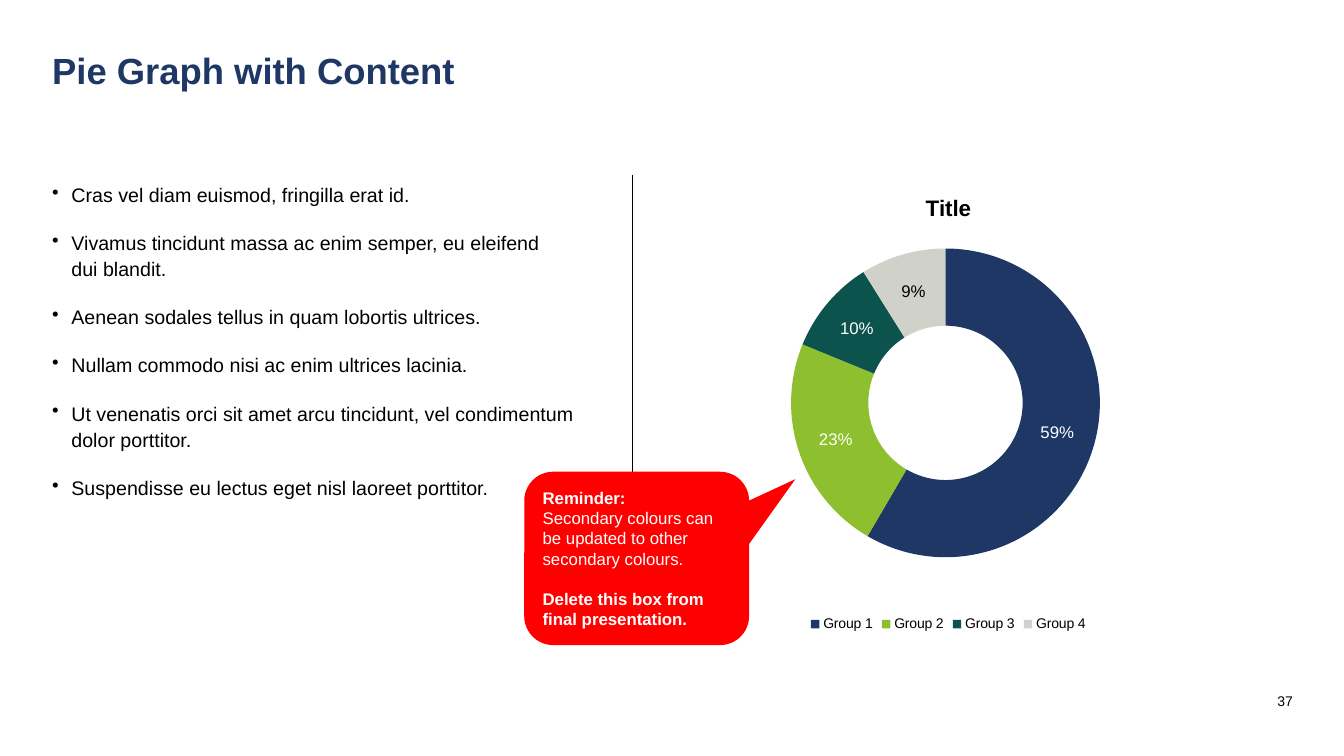
from lxml import etree
from pptx import Presentation
from pptx.chart.data import CategoryChartData
from pptx.dml.color import RGBColor
from pptx.enum.chart import XL_CHART_TYPE, XL_LEGEND_POSITION
from pptx.enum.shapes import MSO_CONNECTOR, MSO_SHAPE
from pptx.enum.text import MSO_ANCHOR, PP_ALIGN
from pptx.oxml import parse_xml
from pptx.oxml.ns import nsdecls, qn
from pptx.util import Inches, Pt

DOUGHNUT = XL_CHART_TYPE.DOUGHNUT
BOTTOM = XL_LEGEND_POSITION.BOTTOM
STRAIGHT = MSO_CONNECTOR.STRAIGHT
CALLOUT = MSO_SHAPE.ROUNDED_RECTANGULAR_CALLOUT
TOP, MIDDLE = MSO_ANCHOR.TOP, MSO_ANCHOR.MIDDLE
LEFT, RIGHT = PP_ALIGN.LEFT, PP_ALIGN.RIGHT

FONT = "Arial"
COLOURS = {
    "navy": "1E3765",
    "lime": "8DBF2E",
    "teal": "0D534D",
    "stone": "D0D1C9",
    "red": "FF0000",
    "black": "000000",
    "white": "FFFFFF",
}
POINTS = [
    "Cras vel diam euismod, fringilla erat id.",
    "Vivamus tincidunt massa ac enim semper, eu eleifend\vdui blandit.",
    "Aenean sodales tellus in quam lobortis ultrices.",
    "Nullam commodo nisi ac enim ultrices lacinia.",
    "Ut venenatis orci sit amet arcu tincidunt, vel condimentum dolor porttitor.",
    "Suspendisse eu lectus eget nisl laoreet porttitor.",
]
GROUPS = [
    ("Group 1", 59, "navy"),
    ("Group 2", 23, "lime"),
    ("Group 3", 10, "teal"),
    ("Group 4", 9, "stone"),
]
PERCENT = '0"%"'


def colour(name):
    return RGBColor.from_string(COLOURS[name])


def style_font(font, size, ink="black", bold=False):
    font.name, font.size, font.bold = FONT, Pt(size), bold
    font.color.rgb = colour(ink)


def write(frame, text, size, ink="black", bold=False, align=LEFT,
          spacing=None, before=0, bullet=False):
    first = not frame.text
    paragraph = frame.paragraphs[0] if first else frame.add_paragraph()
    paragraph.alignment = align
    if spacing:
        paragraph.line_spacing = spacing
    if before and not first:
        paragraph.space_before = Pt(before)
    if bullet:
        properties = paragraph._p.get_or_add_pPr()
        properties.set("marL", str(Inches(0.19)))
        properties.set("indent", str(-Inches(0.19)))
        etree.SubElement(properties, qn("a:buChar")).set("char", "•")
    for index, line in enumerate(text.split("\v")):
        if index:
            paragraph.add_line_break()
        run = paragraph.add_run()
        run.text = line
        style_font(run.font, size, ink, bold)


class SlideBuilder:
    """Adds consistently styled elements to one slide."""

    def __init__(self, slide):
        self.shapes = slide.shapes

    def textbox(self, box, anchor=TOP):
        frame = self.shapes.add_textbox(*map(Inches, box)).text_frame
        frame.word_wrap = True
        frame.vertical_anchor = anchor
        return frame

    def divider(self, x, top, bottom):
        rule = self.shapes.add_connector(
            STRAIGHT, Inches(x), Inches(top), Inches(x), Inches(bottom))
        rule.line.color.rgb = colour("black")
        rule.line.width = Pt(0.5)
        etree.SubElement(rule._element.spPr, qn("a:effectLst"))

    def callout(self, box, adjustments):
        bubble = self.shapes.add_shape(CALLOUT, *map(Inches, box))
        bubble.shadow.inherit = False
        bubble.fill.solid()
        bubble.fill.fore_color.rgb = colour("red")
        bubble.line.fill.background()
        for index, value in enumerate(adjustments):
            bubble.adjustments[index] = value
        frame = bubble.text_frame
        frame.word_wrap = True
        frame.vertical_anchor = MIDDLE
        frame.margin_top = frame.margin_bottom = Inches(0.39)
        return frame

    def doughnut(self, box, title, groups, layout, hole):
        names, values, fills = zip(*groups)
        data = CategoryChartData()
        data.categories = names
        data.add_series("Series 1", values)
        chart = self.shapes.add_chart(DOUGHNUT, *map(Inches, box), data).chart
        style_font(chart.font, 10)
        chart.has_title = True
        write(chart.chart_title.text_frame, title, 16, bold=True)
        chart.chart_title.include_in_layout = False
        chart.has_legend = True
        chart.legend.position = BOTTOM
        chart.legend.include_in_layout = False
        style_font(chart.legend.font, 10)

        plot = chart.plots[0]
        plot.vary_by_categories = True
        plot._element.find(qn("c:holeSize")).set("val", str(hole))
        series = plot.series[0]
        labels = series.data_labels
        labels.show_value = True
        labels.number_format = PERCENT
        labels.number_format_is_linked = False
        style_font(labels.font, 12, "white")
        for index, fill in enumerate(fills):
            slice_format = series.points[index].format
            slice_format.fill.solid()
            slice_format.fill.fore_color.rgb = colour(fill)
            slice_format.line.fill.background()

        last = len(groups) - 1
        style_font(series.points[last].data_label.font, 12, "black")
        label = labels._element.find(qn("c:dLbl"))
        number_format = etree.Element(qn("c:numFmt"))
        number_format.set("formatCode", PERCENT)
        number_format.set("sourceLinked", "0")
        label.insert(1, number_format)
        self.place_plot(chart, layout)

    def place_plot(self, chart, layout):
        settings = [("layoutTarget", "inner"), ("xMode", "edge"), ("yMode", "edge")]
        settings += zip("xywh", layout)
        items = "".join(f'<c:{tag} val="{value}"/>' for tag, value in settings)
        area = chart._chartSpace.chart.plotArea
        for old in area.findall(qn("c:layout")):
            area.remove(old)
        area.insert(0, parse_xml(
            f'<c:layout {nsdecls("c")}><c:manualLayout>{items}'
            '</c:manualLayout></c:layout>'))


def main():
    deck = Presentation()
    deck.slide_width, deck.slide_height = Inches(13.33), Inches(7.5)
    builder = SlideBuilder(deck.slides.add_slide(deck.slide_layouts[6]))
    top, width, height = 1.74, 5.47, 4.57

    builder.divider(6.27, top, top + height)
    heading = builder.textbox((0.42, 0.48, 9.37, 1.08))
    write(heading, "Pie Graph with Content", 26, "navy", bold=True, spacing=0.9)

    body = builder.textbox((0.42, top, width, height))
    for point in POINTS:
        write(body, point, 14, spacing=1.1, before=16, bullet=True)

    builder.doughnut((6.67, top, width, height), "Title", GROUPS,
                     layout=(0.215, 0.157, 0.56, 0.674), hole=59)

    page_number = builder.textbox((12.14, 6.81, 0.78, 0.29), MIDDLE)
    write(page_number, "37", 10, align=RIGHT)

    reminder = builder.callout((5.2, 4.68, 2.23, 1.72), (0.706, -0.457, 0.167))
    write(reminder, "Reminder:", 12, "white", bold=True)
    write(reminder, "Secondary colours can be updated to other secondary colours.",
          12, "white")
    write(reminder, "Delete this box from final presentation.", 12, "white",
          bold=True, before=14.4)

    deck.save("out.pptx")


if __name__ == "__main__":
    main()
